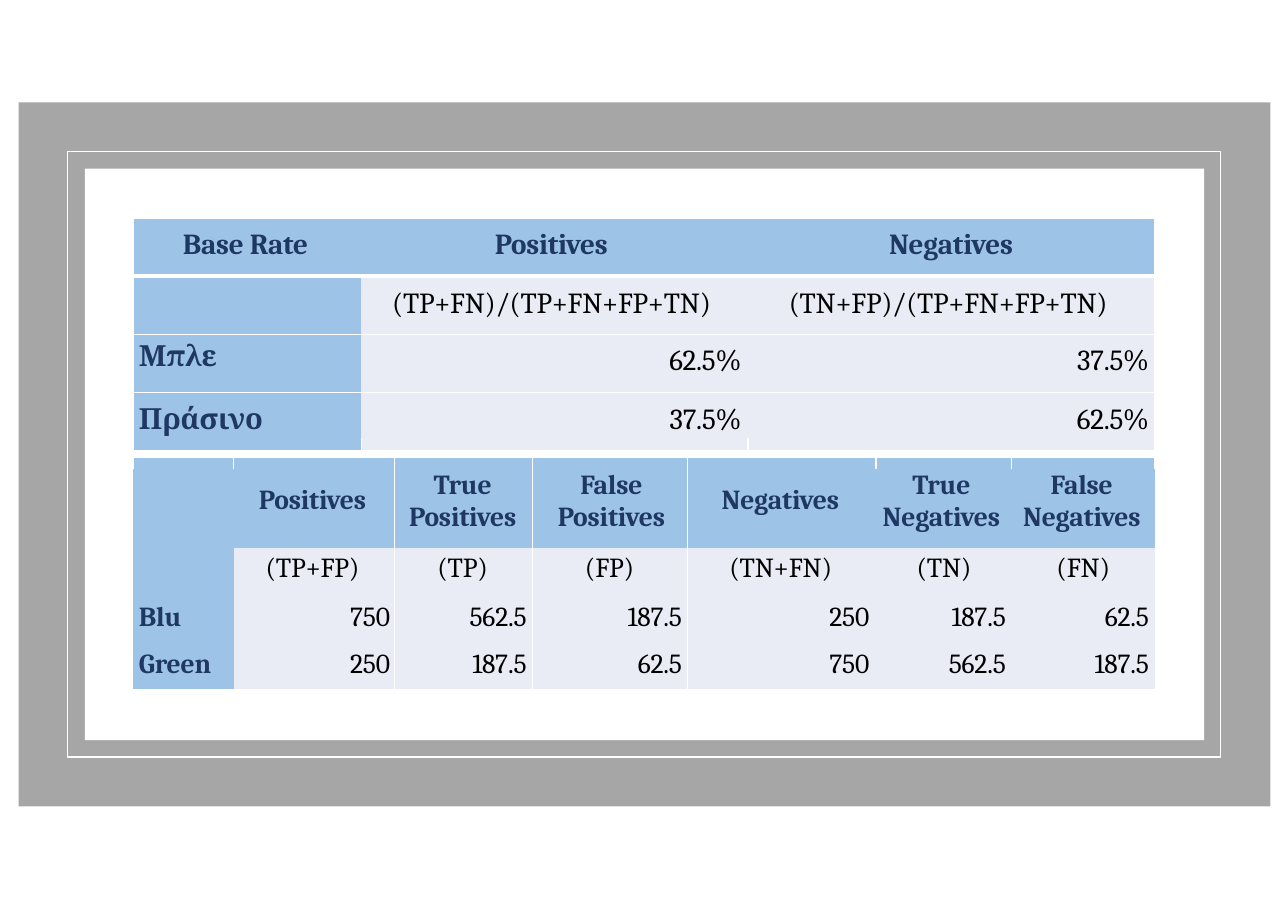
from dataclasses import dataclass
from itertools import accumulate

from lxml.etree import SubElement
from pptx import Presentation
from pptx.dml.color import RGBColor
from pptx.enum.shapes import MSO_CONNECTOR, MSO_SHAPE
from pptx.enum.text import MSO_ANCHOR, PP_ALIGN
from pptx.oxml.ns import qn
from pptx.util import Inches, Pt


@dataclass(frozen=True)
class Theme:
    font: str = "Cambria"
    white: str = "FFFFFF"
    gray: str = "A6A6A6"
    head: str = "9DC3E6"
    body: str = "E9EBF5"
    navy: str = "1F3763"
    black: str = "000000"
    large: float = 19
    small: float = 18
    thin: float = 0.85
    thick: float = 2.56
    tracking: str = "-10"
    no_grid: str = "{2D5ABB26-0587-4C30-8999-92F81FD0307C}"


T = Theme()
WIDTH, HEIGHT = Inches(11.69), Inches(8.26)
CENTER, RIGHT = "center", "right"

BACKDROP = (1.45, 11.26, 97.18, 77.36)
OUTLINE = (5.22, 16.65, 89.56, 66.55)
PANEL = (6.59, 18.52, 86.91, 62.83)
RATES_BOX = (10.35, 23.97, 79.3, 25.54)
RATES_TABLE = (10.35, 23.97, 79.3, 24.21)
COUNTS_BOX = (10.35, 50.24, 79.3, 25.54)
COUNTS_TABLE = (10.35, 51.57, 79.3, 24.21)

RATES = [
    ["Base Rate", "Positives", "Negatives"],
    ["Μπλε", "(TP+FN)/(TP+FN+FP+TN)\n62.5%", "(TN+FP)/(TP+FN+FP+TN)\n37.5%"],
    ["Πράσινο", "37.5%", "62.5%"],
]
RATES_ALIGN = [[0.45, CENTER, 1.12], [0.05, 0.28, 0.21], [0.05, RIGHT, RIGHT]]
RATES_TOPS = [[0.09] * 3, [0.58, 0.1, 0.1], [0.1] * 3]

COUNTS = [
    ["", "Positives", "True\nPositives", "False\nPositives",
     "Negatives", "True\nNegatives", "False\nNegatives"],
    ["", "(TP+FP)", "(TP)", "(FP)", "(TN+FN)", "(TN)", "(FN)"],
    ["Blu", "750", "562.5", "187.5", "250", "187.5", "62.5"],
    ["Green", "250", "187.5", "62.5", "750", "562.5", "187.5"],
]
COUNTS_ALIGN = [
    [CENTER, 0.23, CENTER, CENTER, 0.18, CENTER, CENTER],
    [CENTER, 0.29, 0.35, 0.4, 0.25, 0.36, 0.38],
    [0.05] + [RIGHT] * 6,
    [0.05] + [RIGHT] * 6,
]
COUNTS_TOPS = [[0, 0.14, 0, 0, 0.14, 0, 0], [0.05] * 7, [0.06] * 7, [0.06] * 7]


def place(box):
    return [int(share * size / 100) for share, size in
            zip(box, (WIDTH, HEIGHT, WIDTH, HEIGHT))]


def edges(start, length, shares):
    return [int(start + length * total / sum(shares))
            for total in accumulate(shares, initial=0)]


def add_panel(s, x, y, w, h, fill=None, line=None):
    sp = s.shapes.add_shape(MSO_SHAPE.RECTANGLE, x, y, w, h)
    sp.shadow.inherit = False
    if fill:
        sp.fill.solid()
        sp.fill.fore_color.rgb = RGBColor.from_string(fill)
    else:
        sp.fill.background()
    if line:
        sp.line.color.rgb = RGBColor.from_string(line)
        sp.line.width = Pt(T.thin)
    else:
        sp.line.fill.background()


def add_line(s, x1, y1, x2, y2, width=T.thin):
    ln = s.shapes.add_connector(MSO_CONNECTOR.STRAIGHT, x1, y1, x2, y2)
    ln.line.color.rgb = RGBColor.from_string(T.white)
    ln.line.width = Pt(width)
    SubElement(ln._element.spPr, qn("a:effectLst"))


def write_cell(cell, text, size, is_head, align, top, pad):
    cell.margin_left = cell.margin_bottom = 0
    cell.margin_top, cell.margin_right = Inches(top), Inches(pad)
    cell.vertical_anchor = MSO_ANCHOR.TOP
    cell.fill.solid()
    cell.fill.fore_color.rgb = RGBColor.from_string(T.head if is_head else T.body)
    tf = cell.text_frame
    for i, line in enumerate(text.split("\n")):
        p = tf.add_paragraph() if i else tf.paragraphs[0]
        if align == CENTER:
            p.alignment = PP_ALIGN.CENTER
        elif align == RIGHT or i:
            p.alignment = PP_ALIGN.RIGHT
        else:
            p.alignment = PP_ALIGN.LEFT
            p._p.get_or_add_pPr().set("marL", str(Inches(align)))
        if i:
            p.space_before = Pt(0.5 if align == CENTER else 15.2)
        p.font.size = Pt(size)
        if line:
            r = p.add_run()
            r.text = line
            r.font.name = T.font
            r.font.size = Pt(size)
            r.font.bold = is_head
            r.font.color.rgb = RGBColor.from_string(T.navy if is_head else T.black)
            r._r.get_or_add_rPr().set("spc", T.tracking)


def add_grid(s, box, data, aligns, tops, cols, rows, pads, size):
    x, y, w, h = place(box)
    frame = s.shapes.add_table(len(rows), len(cols), x, y, w, h)
    table = frame.table
    style = frame._element.graphic.graphicData.tbl.tblPr.find(qn("a:tableStyleId"))
    style.text = T.no_grid
    for col, share in zip(table.columns, cols):
        col.width = int(w * share / sum(cols))
    for row, share in zip(table.rows, rows):
        row.height = int(h * share / sum(rows))
    for i, row in enumerate(data):
        for j, text in enumerate(row):
            write_cell(table.cell(i, j), text, size, i == 0 or j == 0,
                       aligns[i][j], tops[i][j], pads[j])
    return table


def add_frame(s):
    add_panel(s, *place(BACKDROP), fill=T.gray)
    add_panel(s, *place(OUTLINE), line=T.white)
    add_panel(s, *place(PANEL), fill=T.white)


def add_rates(s, box):
    x, y, w, h = place(box)
    xs = edges(x, w, (2.07, 3.51, 3.69))
    ys = edges(y, h, (1, 1, 1, 1))
    add_panel(s, x, ys[3], xs[1] - x, ys[4] - ys[3], fill=T.head)
    add_panel(s, xs[1], ys[3], xs[3] - xs[1], ys[4] - ys[3], fill=T.body)
    for cx in xs[1:3]:
        add_line(s, cx, y, cx, y + h)
    add_grid(s, RATES_TABLE, RATES, RATES_ALIGN, RATES_TOPS, (2.07, 3.67, 3.53),
             (0.53, 1.05, 0.42), (0, 0.22, 0.05), T.large)
    for i, cy in enumerate(ys):
        add_line(s, x, cy, x + w, cy, T.thick if i == 1 else T.thin)
    for cx in (x, x + w):
        add_line(s, cx, y, cx, y + h)


def add_counts(s, box):
    x, y, w, h = place(box)
    xs = edges(x, w, (0.91, 1.46, 1.25, 1.41, 1.71, 1.23, 1.3))
    ys = edges(y, h, (0.82, 0.43, 0.43, 0.43))
    add_panel(s, x, y, w, ys[1] - y, fill=T.head)
    for j in (0, 1, 5, 6, 7):
        add_line(s, xs[j], y, xs[j], y + h)
    add_line(s, x, y, x + w, y)
    table = add_grid(s, COUNTS_TABLE, COUNTS, COUNTS_ALIGN, COUNTS_TOPS,
                     (0.91, 1.5, 1.29, 1.46, 1.59, 1.25, 1.27),
                     (0.71, 0.43, 0.43, 0.43),
                     (0, 0.08, 0.13, 0.18, 0.07, 0.08, 0.05), T.small)
    table.cell(0, 0).merge(table.cell(1, 0))
    for cx in xs[2:5]:
        add_line(s, cx, y, cx, y + h)
    add_line(s, x, y + h, x + w, y + h)


def main():
    prs = Presentation()
    prs.slide_width, prs.slide_height = WIDTH, HEIGHT
    s = prs.slides.add_slide(prs.slide_layouts[6])
    add_frame(s)
    add_rates(s, RATES_BOX)
    add_counts(s, COUNTS_BOX)
    prs.save("out.pptx")


if __name__ == "__main__":
    main()
